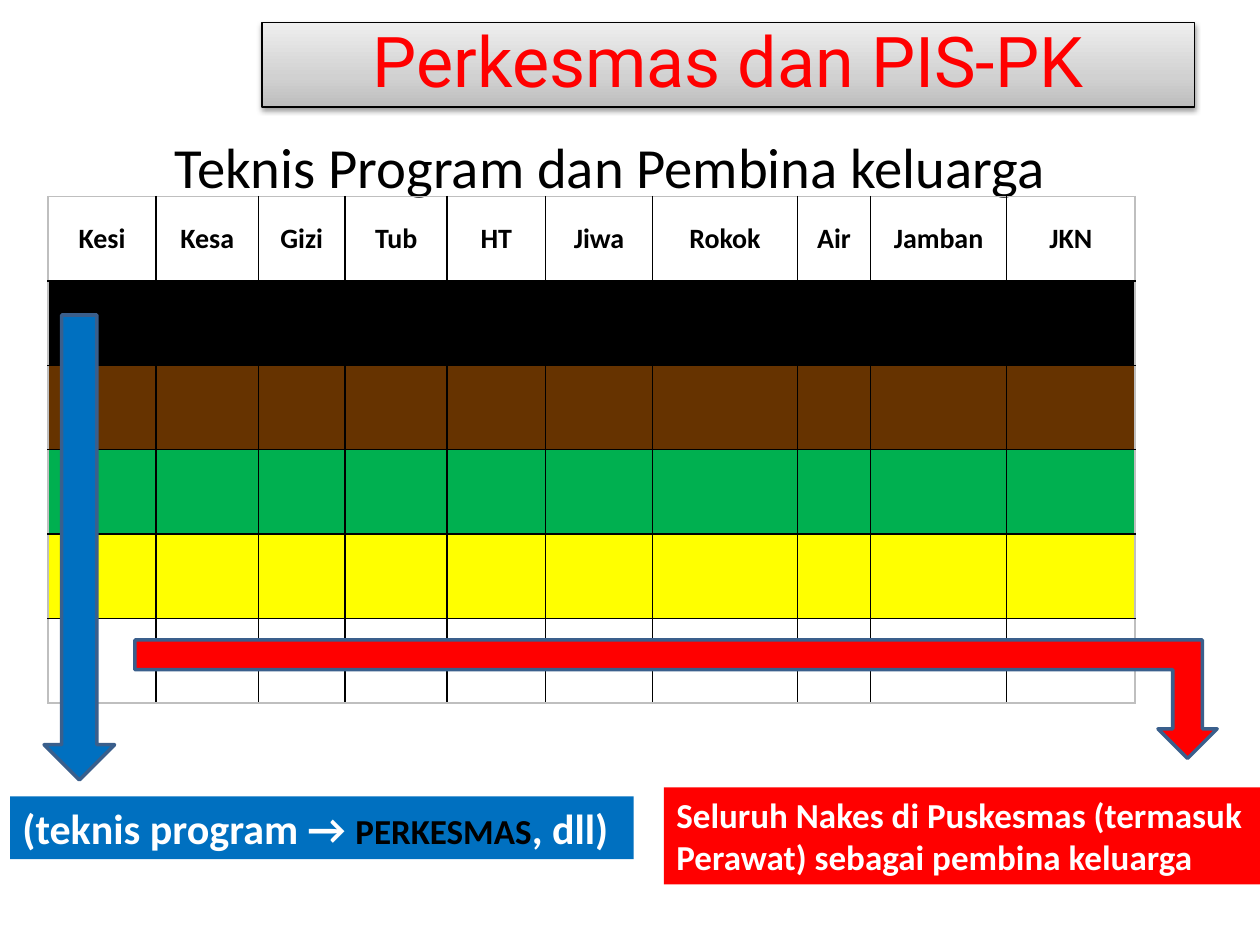
import copy

import pptx
import pptx.dml.color
import pptx.enum.shapes
import pptx.enum.text
import pptx.oxml
import pptx.oxml.ns
import pptx.util

Inches = pptx.util.Inches
Pt = pptx.util.Pt
SHAPE = pptx.enum.shapes.MSO_SHAPE
ALIGN = pptx.enum.text.PP_ALIGN
ANCHOR = pptx.enum.text.MSO_ANCHOR

COLORS = {
    "black": "000000", "white": "FFFFFF", "brown": "663300", "green": "00B050",
    "yellow": "FFFF00", "red": "FF0000", "blue": "0070C0", "edge": "3A5F8C",
    "frame": "BFBFBF", "dark": "BDBDBD", "mid": "D1D1D1", "light": "EEEEEE",
}
NSDECL = pptx.oxml.ns.nsdecls("a")

HEADERS = ["Kesi", "Kesa", "Gizi", "Tub", "HT", "Jiwa", "Rokok", "Air", "Jamban", "JKN"]
COL_WIDTHS = [0.86, 0.81, 0.69, 0.81, 0.78, 0.85, 1.15, 0.58, 1.08, 1.02]
ROW_FILLS = [None, "black", "brown", "green", "yellow", "white"]
ROW_HEIGHT = 0.67


def rgb(name):
    return pptx.dml.color.RGBColor.from_string(COLORS[name])


def add_run(p, text, color, **font):
    r = p.add_run()
    r.text = text
    for name, value in {"name": "Calibri", **font}.items():
        setattr(r.font, name, value)
    r.font.color.rgb = rgb(color)


def add_box(s, kind, box, fill, line=None, width=2):
    sp = s.shapes.add_shape(kind, *map(Inches, box))
    sp.shadow.inherit = False
    if fill:
        sp.fill.solid()
        sp.fill.fore_color.rgb = rgb(fill)
    if line:
        sp.line.color.rgb = rgb(line)
        sp.line.width = Pt(width)
    else:
        sp.line.fill.background()
    return sp


def fill_text(sp, runs, align=ALIGN.LEFT):
    tf = sp.text_frame
    tf.word_wrap = True
    tf.vertical_anchor = ANCHOR.MIDDLE
    p = tf.paragraphs[0]
    p.alignment = align
    for text, color, font in runs:
        add_run(p, text, color, **font)
    return p


def set_title(s):
    sp = s.shapes.title
    sp.left, sp.top, sp.width, sp.height = map(Inches, (0, 1.08, 9.68, 0.47))
    fill_text(sp, [("Teknis Program dan Pembina keluarga", "black", {"size": Pt(32.4)})],
              ALIGN.CENTER)


def set_borders(cell, outer):
    """Draw the four sides; sides named in outer get the frame colour."""
    tcPr = cell._tc.get_or_add_tcPr()
    for i, side in enumerate("LRTB"):
        color = COLORS["frame" if side in outer else "black"]
        tcPr.insert(i, pptx.oxml.parse_xml(
            f'<a:ln{side} {NSDECL} w="12700"><a:solidFill><a:srgbClr val="{color}"/>'
            f'</a:solidFill></a:ln{side}>'))


def add_indicator_table(s):
    rows, cols = len(ROW_FILLS), len(HEADERS)
    table = s.shapes.add_table(rows, cols, Inches(0.38), Inches(1.56),
                               Inches(sum(COL_WIDTHS)), Inches(ROW_HEIGHT * rows)).table
    table.horz_banding = False
    for column, width in zip(table.columns, COL_WIDTHS):
        column.width = Inches(width)
    for i, fill in enumerate(ROW_FILLS):
        table.rows[i].height = Inches(ROW_HEIGHT)
        for j, header in enumerate(HEADERS):
            cell = table.cell(i, j)
            cell.vertical_anchor = ANCHOR.MIDDLE
            if fill:
                cell.fill.solid()
                cell.fill.fore_color.rgb = rgb(fill)
            else:
                cell.fill.background()
                p = cell.text_frame.paragraphs[0]
                p.alignment = ALIGN.CENTER
                add_run(p, header, "black", size=Pt(16), bold=True)
            edges = {"L": j == 0, "R": j == cols - 1, "T": i == 0, "B": i == rows - 1}
            set_borders(cell, [side for side, on in edges.items() if on])


def add_banner(s):
    sp = add_box(s, SHAPE.RECTANGLE, (2.08, 0.18, 7.4, 0.67), None, "black", 0.75)
    # Three-stop gradient, dark at the bottom
    sp.fill.gradient()
    sp.fill.gradient_angle = 90
    first = sp._element.spPr.find(".//" + pptx.oxml.ns.qn("a:gs"))
    first.addnext(copy.deepcopy(first))
    stops = [(0, "dark"), (0.35, "mid"), (1, "light")]
    for stop, (position, color) in zip(sp.fill.gradient_stops, stops):
        stop.position = position
        stop.color.rgb = rgb(color)
    # Soft shadow below
    effects = sp._element.spPr.find(pptx.oxml.ns.qn("a:effectLst"))
    effects.append(pptx.oxml.parse_xml(
        f'<a:outerShdw {NSDECL} blurRad="{Pt(3.1)}" dist="{Pt(1.6)}" dir="5400000" '
        f'rotWithShape="0"><a:srgbClr val="{COLORS["black"]}"><a:alpha val="38000"/>'
        f'</a:srgbClr></a:outerShdw>'))
    p = fill_text(sp, [("Perkesmas dan PIS-PK", "red", {"name": "Roboto", "size": Pt(40)})],
                  ALIGN.CENTER)
    p.line_spacing = 0.9


def main():
    prs = pptx.Presentation()
    prs.slide_width, prs.slide_height = Inches(10), Inches(7.5)
    s = prs.slides.add_slide(prs.slide_layouts[5])

    set_title(s)
    add_indicator_table(s)

    # Arrows from the table to the two notes
    add_box(s, SHAPE.DOWN_ARROW, (0.35, 2.5, 0.56, 3.69), "blue", "edge")
    bent = add_box(s, SHAPE.BENT_UP_ARROW, (1.07, 5.08, 8.59, 0.94), "red", "edge")
    bent._element.spPr.xfrm.set("flipV", "1")

    # Notes
    large = {"size": Pt(24), "bold": True}
    small = {"size": Pt(20), "bold": True}
    program = add_box(s, SHAPE.RECTANGLE, (0.08, 6.32, 4.95, 0.5), "blue")
    fill_text(program, [("(teknis program → ", "white", large),
                        ("PERKESMAS", "black", small),
                        (", dll)", "white", large)])
    family = add_box(s, SHAPE.RECTANGLE, (5.27, 6.25, 4.73, 0.77), "red")
    fill_text(family, [("Seluruh Nakes di Puskesmas (termasuk Perawat) sebagai pembina keluarga",
                        "white", small)])

    add_banner(s)
    prs.save("out.pptx")


if __name__ == "__main__":
    main()
